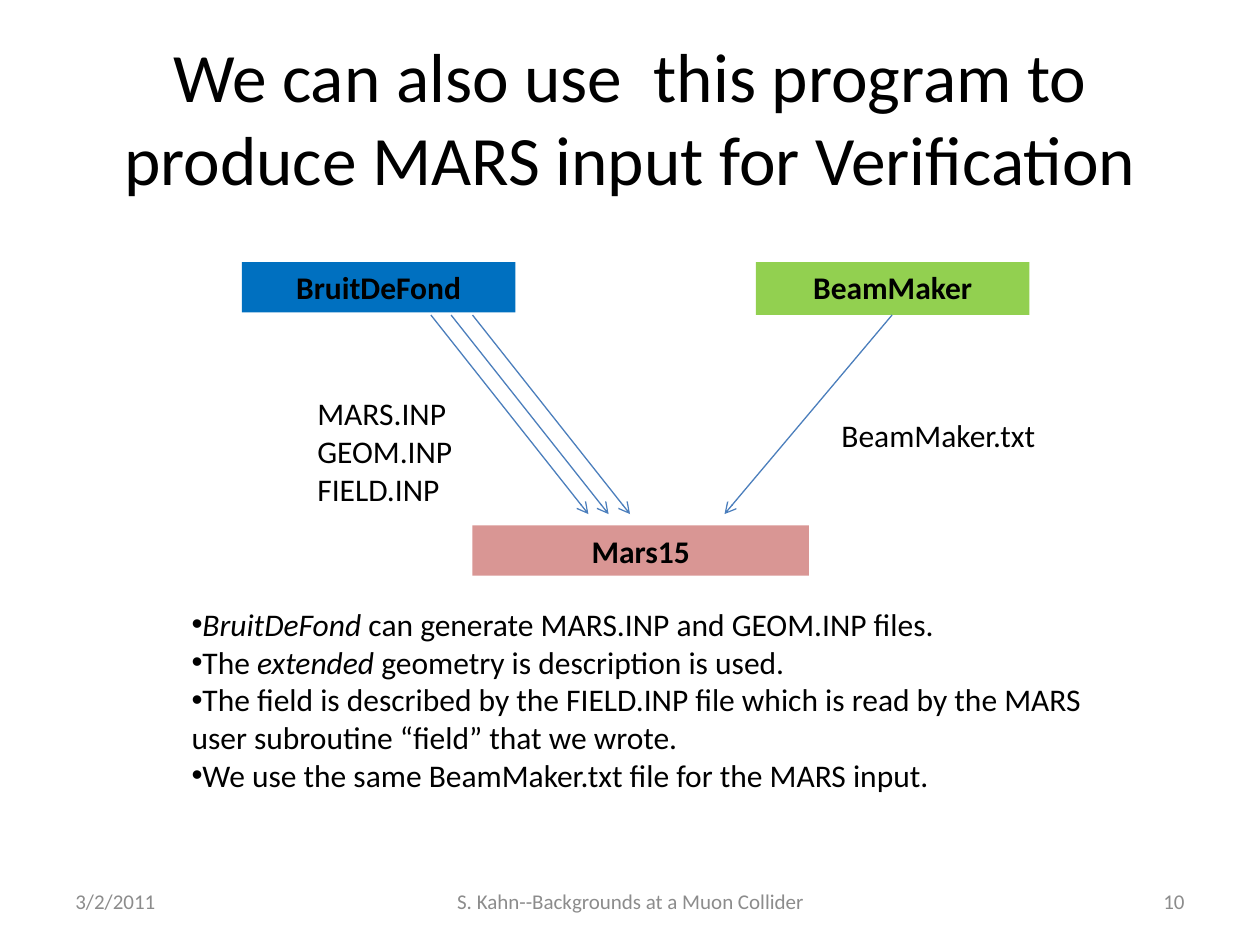
"""Build a slide on making MARS input for verification."""
from lxml.etree import SubElement
from pptx import Presentation
from pptx.dml.color import RGBColor
from pptx.enum.shapes import MSO_CONNECTOR, MSO_SHAPE
from pptx.enum.text import MSO_ANCHOR, MSO_AUTO_SIZE, PP_ALIGN
from pptx.oxml.ns import qn
from pptx.util import Inches, Pt

BLACK = RGBColor(0x00, 0x00, 0x00)
GRAY = RGBColor(0x8C, 0x8C, 0x8C)
BLUE = RGBColor(0x00, 0x70, 0xC0)
GREEN = RGBColor(0x92, 0xD0, 0x50)
ROSE = RGBColor(0xD9, 0x96, 0x94)
STEEL = RGBColor(0x4B, 0x7E, 0xBC)
FACE = "Calibri"

TITLE = "We can also use  this program to produce MARS input for Verification"
POINTS = [
    [("BruitDeFond", True), (" can generate MARS.INP and GEOM.INP files.", False)],
    [("The ", False), ("extended", True), (" geometry is description is used.", False)],
    [("The field is described by the FIELD.INP file which is read by the MARS "
      "user subroutine “field” that we wrote.", False)],
    [("We use the same BeamMaker.txt file for the MARS input.", False)],
]
BOXES = [
    ("BruitDeFond", 1.92, 2.08, 2.17, 0.4, BLUE),
    ("BeamMaker", 6, 2.08, 2.17, 0.42, GREEN),
    ("Mars15", 3.75, 4.17, 2.67, 0.4, ROSE),
]
ARROWS = [(3.42, 4.67), (3.58, 4.83), (3.75, 5), (7.08, 5.75)]
FILES = [
    ("MARS.INP\nGEOM.INP\nFIELD.INP", 2.42, 3.08, 1.75, 1.01),
    ("BeamMaker.txt", 6.58, 3.25, 2, 0.42),
]
FOOT = [
    ("3/2/2011", 0.5, 2.33, PP_ALIGN.LEFT),
    ("S. Kahn--Backgrounds at a Muon Collider", 3.42, 3.17, PP_ALIGN.CENTER),
    ("10", 7.17, 2.33, PP_ALIGN.RIGHT),
]


def place(shape, left, top, width, height):
    """Move and size a shape, in inches."""
    shape.left, shape.top = Inches(left), Inches(top)
    shape.width, shape.height = Inches(width), Inches(height)


def style(frame, size=18, color=BLACK, align=PP_ALIGN.LEFT,
          anchor=MSO_ANCHOR.TOP, bold=False):
    """Format every paragraph of a text frame."""
    frame.word_wrap = True
    frame.auto_size = MSO_AUTO_SIZE.NONE
    frame.vertical_anchor = anchor
    for para in frame.paragraphs:
        para.alignment = align
        font = para.font
        font.name, font.size, font.bold = FACE, Pt(size), bold
        font.color.rgb = color


def add_title(slide):
    """Fill the title placeholder."""
    title = slide.shapes.title
    place(title, 0.5, 0.3, 9, 1.25)
    title.text_frame.text = TITLE
    style(title.text_frame, 39.6, align=PP_ALIGN.CENTER, anchor=MSO_ANCHOR.MIDDLE)


def add_list(slide):
    """Fill the body placeholder with flush bullets."""
    body = slide.placeholders[1]
    place(body, 1.42, 4.75, 7.33, 1.62)
    frame = body.text_frame
    for num, parts in enumerate(POINTS):
        para = frame.add_paragraph() if num else frame.paragraphs[0]
        para.space_before = Pt(0)
        props = para._p.get_or_add_pPr()
        props.set("marL", "0")
        props.set("indent", "0")
        SubElement(props, qn("a:buChar"), char="•")
        for text, slant in parts:
            run = para.add_run()
            run.text = text
            run.font.italic = slant
    style(frame)


def add_box(slide, text, left, top, width, height, fill):
    """Add a filled box with a bold label."""
    box = slide.shapes.add_shape(MSO_SHAPE.RECTANGLE, 0, 0, 0, 0)
    place(box, left, top, width, height)
    box.shadow.inherit = False
    box.fill.solid()
    box.fill.fore_color.rgb = fill
    box.line.fill.background()
    box.text_frame.text = text
    style(box.text_frame, align=PP_ALIGN.CENTER, bold=True)


def add_arrow(slide, start, end):
    """Add an arrow from the upper row to the lower box."""
    arrow = slide.shapes.add_connector(
        MSO_CONNECTOR.STRAIGHT, Inches(start), Inches(2.5), Inches(end), Inches(4.08))
    arrow.line.color.rgb = STEEL
    arrow.line.width = Pt(0.75)
    SubElement(arrow.line._get_or_add_ln(), qn("a:tailEnd"), type="arrow")
    SubElement(arrow._element.spPr, qn("a:effectLst"))


def add_text(slide, text, left, top, width, height, **look):
    """Add a text box."""
    box = slide.shapes.add_textbox(0, 0, 0, 0)
    place(box, left, top, width, height)
    box.text_frame.text = text
    style(box.text_frame, **look)


def main():
    """Build and save the slide."""
    deck = Presentation()
    deck.slide_width, deck.slide_height = Inches(10), Inches(7.5)
    slide = deck.slides.add_slide(deck.slide_layouts[1])
    add_title(slide)
    add_list(slide)
    for box in BOXES:
        add_box(slide, *box)
    for start, end in ARROWS:
        add_arrow(slide, start, end)
    for label in FILES:
        add_text(slide, *label)
    for text, left, width, align in FOOT:
        add_text(slide, text, left, 6.95, width, 0.4, size=12, color=GRAY,
                 align=align, anchor=MSO_ANCHOR.MIDDLE)
    deck.save("out.pptx")


if __name__ == "__main__":
    main()
